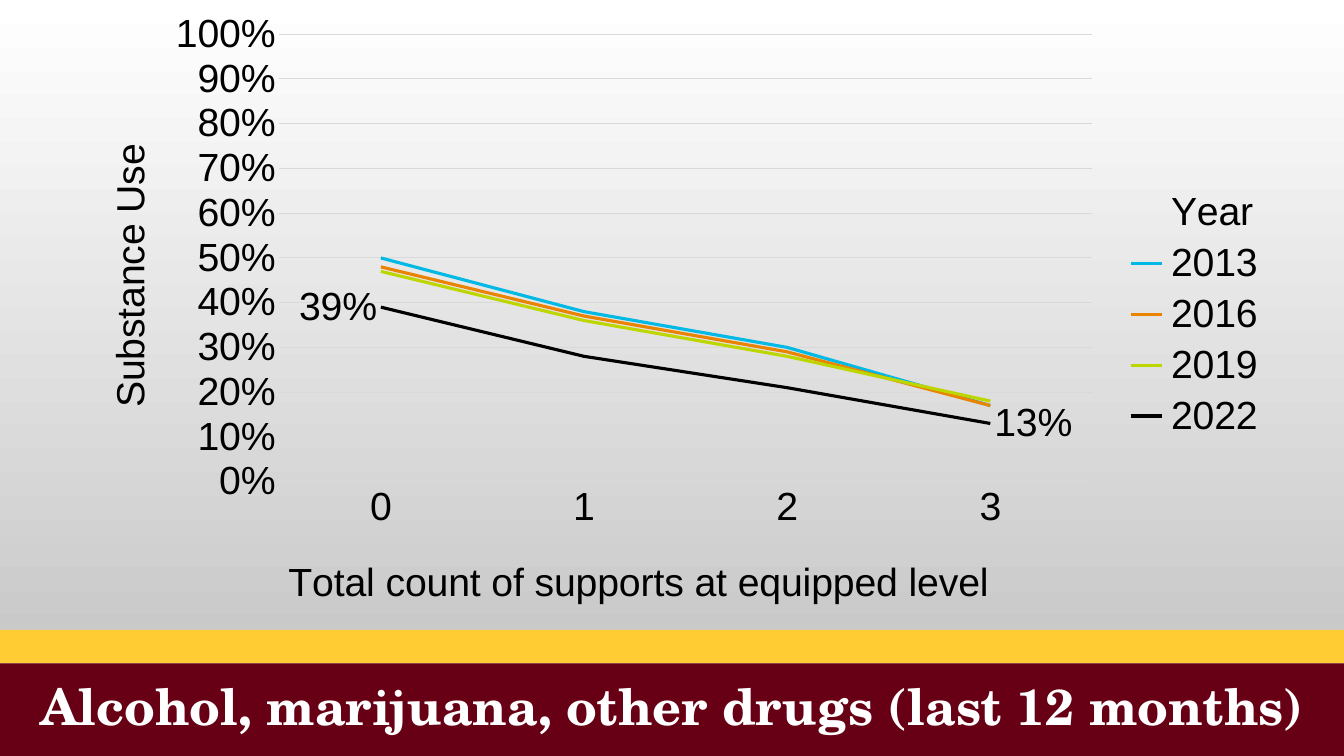
from lxml import etree
from pptx import Presentation
from pptx.chart.data import CategoryChartData
from pptx.dml.color import RGBColor
from pptx.enum.chart import XL_CHART_TYPE, XL_LABEL_POSITION, XL_LEGEND_POSITION, XL_MARKER_STYLE, XL_TICK_MARK
from pptx.enum.shapes import MSO_SHAPE
from pptx.enum.text import MSO_ANCHOR, MSO_AUTO_SIZE, PP_ALIGN
from pptx.oxml.ns import qn
from pptx.util import Inches, Pt

LINE = XL_CHART_TYPE.LINE
LEFT, RIGHT = XL_LABEL_POSITION.LEFT, XL_LABEL_POSITION.RIGHT
LEGEND_RIGHT = XL_LEGEND_POSITION.RIGHT
NO_MARKER = XL_MARKER_STYLE.NONE
NO_TICK = XL_TICK_MARK.NONE
RECTANGLE = MSO_SHAPE.RECTANGLE
MIDDLE, CENTER = MSO_ANCHOR.MIDDLE, PP_ALIGN.CENTER
NO_AUTO_SIZE = MSO_AUTO_SIZE.NONE

WIDTH, HEIGHT = 13.33, 7.5
MAROON, GOLD, GRID = "670015", "FFCC33", "D9D9D9"
CHART_FONT = {"name": "Arial", "size": Pt(28), "bold": False}
TITLE_FONT = {"name": "TeX Gyre Schola", "size": Pt(36), "bold": True}

SUPPORT_COUNTS = ["0", "1", "2", "3"]
YEARS = [
    ("Year", [None] * 4, None),
    ("2013", [0.5, 0.38, 0.3, 0.17], "00B9E4"),
    ("2016", [0.48, 0.37, 0.29, 0.17], "E98300"),
    ("2019", [0.47, 0.36, 0.28, 0.18], "BED600"),
    ("2022", [0.39, 0.28, 0.21, 0.13], "000000"),
]


def color(hex_code):
    return RGBColor.from_string(hex_code)


def set_font(font, values, hex_code="000000"):
    for name, value in values.items():
        setattr(font, name, value)
    font.color.rgb = color(hex_code)


def set_layout(element, index, box, inner=False):
    """Place a chart part at (x, y[, w, h]), in inches inside a 12 x 6.2 chart."""
    for old in element.findall(qn("c:layout")):
        element.remove(old)
    layout = etree.Element(qn("c:layout"))
    manual = etree.SubElement(layout, qn("c:manualLayout"))
    entries = [("layoutTarget", "inner")] if inner else []
    entries += [("xMode", "edge"), ("yMode", "edge")]
    for key, length, whole in zip("xywh", box, (12, 6.2, 12, 6.2)):
        entries.append((key, f"{length / whole:.4f}"))
    for key, value in entries:
        etree.SubElement(manual, qn(f"c:{key}")).set("val", value)
    element.insert(index, layout)


def add_background(slide):
    fill = slide.background.fill
    fill.gradient()
    fill.gradient_angle = 270
    for stop, position, shade in zip(fill.gradient_stops, (0, 1), ("FFFFFF", "BFBFBF")):
        stop.position = position
        stop.color.rgb = color(shade)


def add_band(slide, top, height, hex_code):
    band = slide.shapes.add_shape(RECTANGLE, 0, Inches(top), Inches(WIDTH), Inches(height))
    band.shadow.inherit = False
    band.fill.solid()
    band.fill.fore_color.rgb = color(hex_code)
    band.line.fill.background()


def add_footer(slide, text, top, height):
    """Gold stripe above a maroon band that carries the slide title."""
    stripe = 0.33
    add_band(slide, top, stripe, GOLD)
    add_band(slide, top + stripe, height - stripe, MAROON)
    title = slide.shapes.title
    title.left, title.top = 0, Inches(top + stripe)
    title.width, title.height = Inches(WIDTH), Inches(height - stripe)
    title.element.getparent().append(title.element)
    frame = title.text_frame
    frame.text = text
    frame.word_wrap = True
    frame.auto_size = NO_AUTO_SIZE
    frame.vertical_anchor = MIDDLE
    paragraph = frame.paragraphs[0]
    paragraph.alignment = CENTER
    paragraph.line_spacing = 0.9
    set_font(paragraph.runs[0].font, TITLE_FONT, "FFFFFF")


def format_axis(axis, text, title_corner, rotation):
    axis.major_tick_mark = axis.minor_tick_mark = NO_TICK
    set_font(axis.tick_labels.font, CHART_FONT)
    frame = axis.axis_title.text_frame
    frame.text = text
    set_font(frame.paragraphs[0].runs[0].font, CHART_FONT)
    title = axis.axis_title._element
    title.find(".//" + qn("a:bodyPr")).set("rot", str(rotation * 60000))
    set_layout(title, 1, title_corner)


def format_line(series, hex_code):
    series.smooth = False
    series.marker.style = NO_MARKER
    if hex_code is None:
        series.format.line.fill.background()
    else:
        series.format.line.color.rgb = color(hex_code)
        series.format.line.width = Pt(2.25)


def label_ends(series):
    series.data_labels.show_value = False
    for index, position in ((0, LEFT), (3, RIGHT)):
        label = series.points[index].data_label
        set_font(label.font, CHART_FONT)
        label.position = position


def add_substance_chart(slide, left, top, width, height):
    data = CategoryChartData(number_format="0%")
    data.categories = SUPPORT_COUNTS
    for name, values, _ in YEARS:
        data.add_series(name, values)
    box = [Inches(length) for length in (left, top, width, height)]
    chart = slide.shapes.add_chart(LINE, *box, data).chart
    chart.has_title = False
    set_font(chart.font, CHART_FONT)
    chart.plots[0].vary_by_categories = False
    set_layout(chart._chartSpace.chart.plotArea, 0, (2.1, 0.34, 8.06, 4.44), inner=True)

    counts, use = chart.category_axis, chart.value_axis
    format_axis(counts, "Total count of supports at equipped level", (2.12, 5.46), 0)
    format_axis(use, "Substance Use", (0.3, 1.36), -90)
    use.minimum_scale, use.maximum_scale, use.major_unit = 0, 1, 0.1
    use.tick_labels.number_format = "0%"
    use.tick_labels.number_format_is_linked = False
    use.format.line.fill.background()
    for line in (counts.format.line, use.major_gridlines.format.line):
        line.color.rgb = color(GRID)
        line.width = Pt(0.75)

    for series, (_, _, hex_code) in zip(chart.plots[0].series, YEARS):
        format_line(series, hex_code)
    label_ends(chart.plots[0].series[-1])

    chart.has_legend = True
    chart.legend.position = LEGEND_RIGHT
    chart.legend.include_in_layout = False
    set_font(chart.legend.font, CHART_FONT)
    set_layout(chart.legend._element, 1, (10.45, 1.82, 1.45, 2.6))


def main():
    presentation = Presentation()
    presentation.slide_width, presentation.slide_height = Inches(WIDTH), Inches(HEIGHT)
    slide = presentation.slides.add_slide(presentation.slide_layouts[5])
    add_background(slide)
    add_substance_chart(slide, 0.67, 0, 12, 6.2)
    add_footer(slide, "Alcohol, marijuana, other drugs (last 12 months)", 6.25, 1.25)
    presentation.save("out.pptx")


if __name__ == "__main__":
    main()
